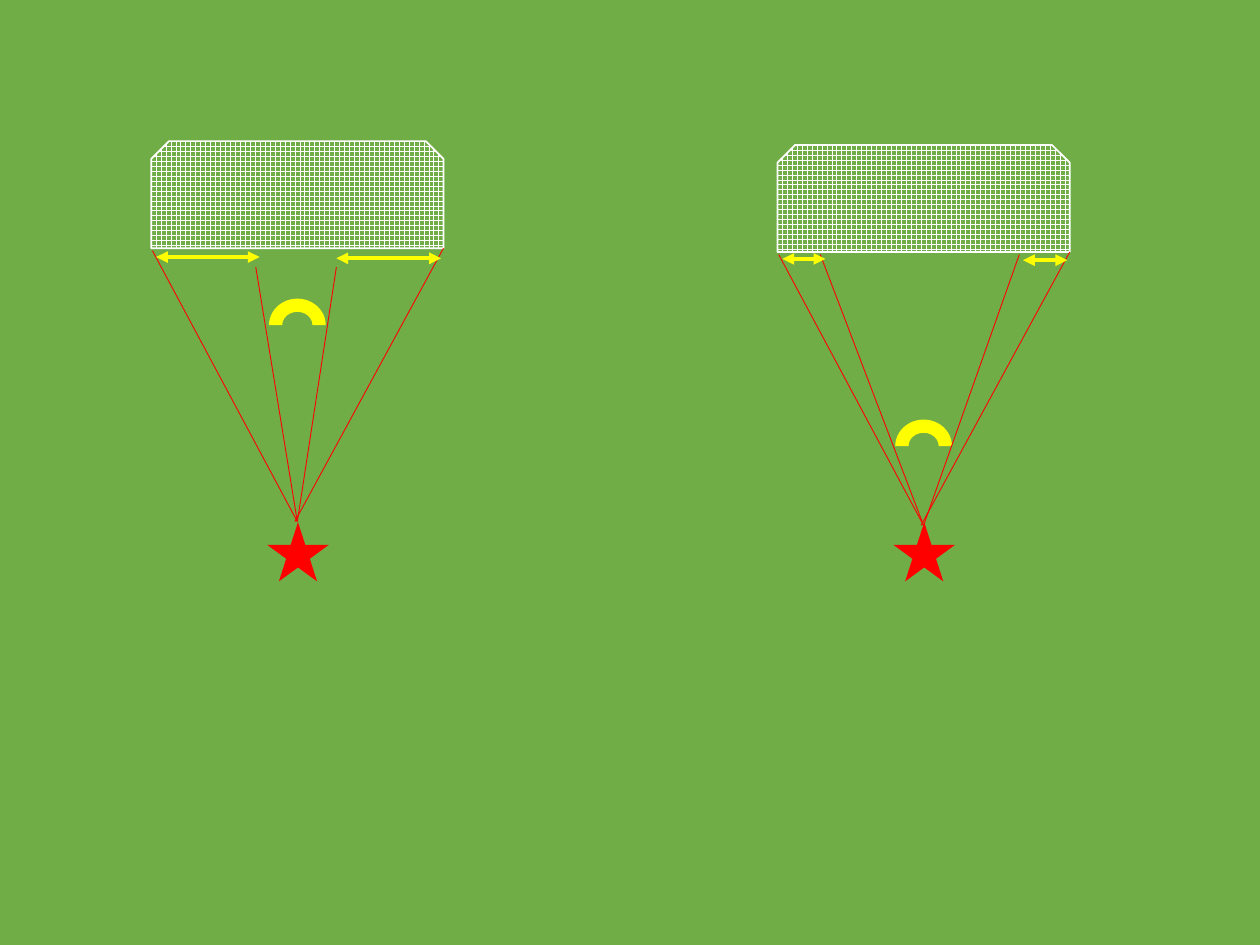
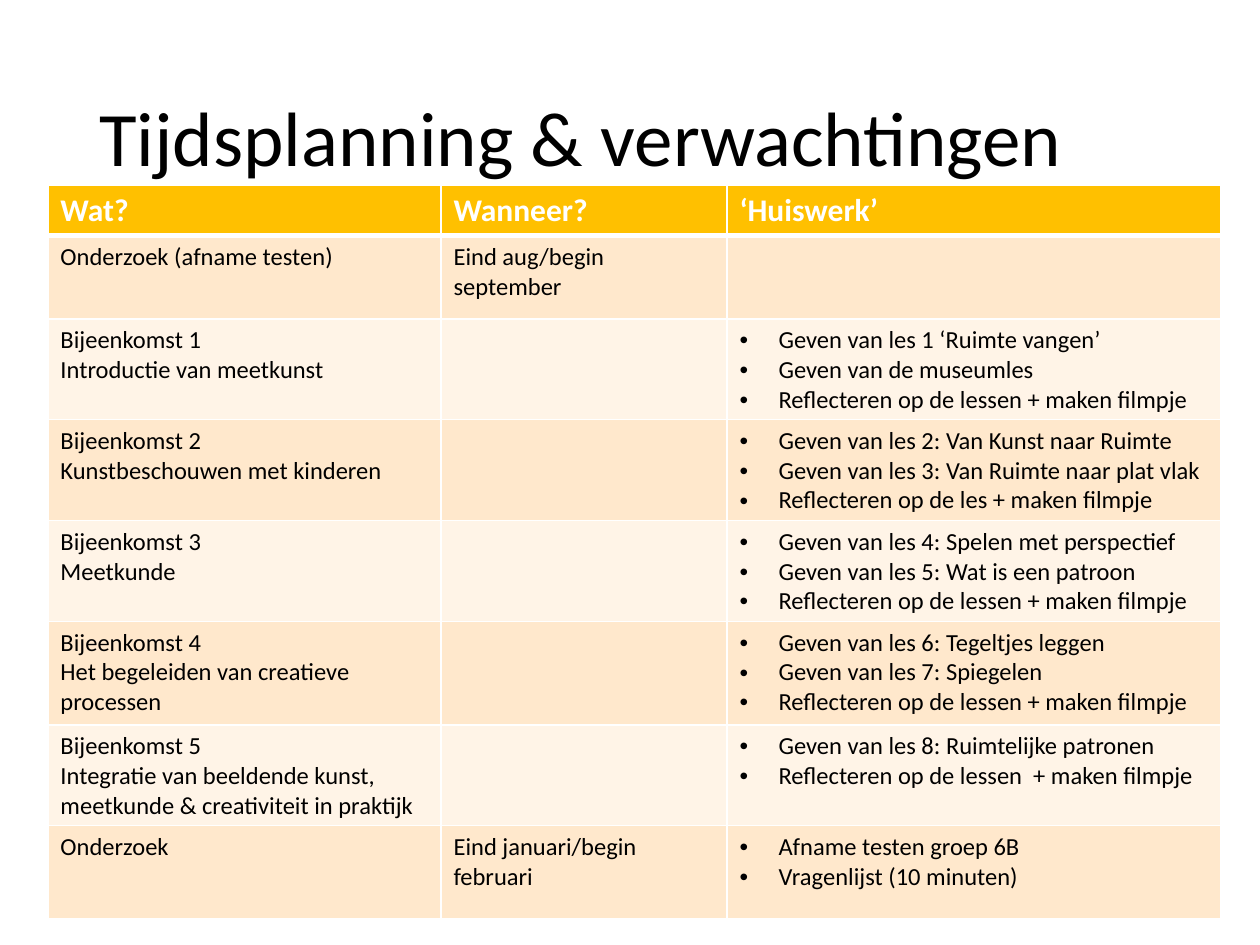
"""Build two slides: shooting angles at a goal, and a project schedule."""
from lxml.etree import SubElement
from pptx import Presentation
from pptx.dml.color import RGBColor
from pptx.enum.dml import MSO_PATTERN
from pptx.enum.shapes import MSO_CONNECTOR, MSO_SHAPE
from pptx.enum.text import MSO_ANCHOR
from pptx.oxml.ns import qn
from pptx.util import Inches, Pt

GRASS, WHITE, BLACK = "70AD47", "FFFFFF", "000000"
RED, YELLOW = "FF0000", "FFFF00"
HEADER, BANDS = "FFC000", ("FFF4E7", "FFE8CC")
GRID_COLUMNS, GRID_ROWS = 100, 75


def color(value):
    return RGBColor.from_string(value)


class Deck:
    """Hold the shared style and draw on the current slide, in grid units."""

    font = "Calibri"

    def __init__(self):
        self.presentation = Presentation()
        self.presentation.slide_width = Inches(10)
        self.presentation.slide_height = Inches(7.5)
        self.unit = self.presentation.slide_width / GRID_COLUMNS

    def add_slide(self):
        blank = self.presentation.slide_layouts[6]
        self.shapes = self.presentation.slides.add_slide(blank).shapes

    def grid(self, *lengths):
        return [round(length * self.unit) for length in lengths]

    def shape(self, preset, area, fill):
        shape = self.shapes.add_shape(preset, *self.grid(*area))
        shape.shadow.inherit = False
        shape.fill.solid()
        shape.fill.fore_color.rgb = color(fill)
        shape.line.fill.background()
        return shape

    def net(self, area):
        goal = self.shape(MSO_SHAPE.SNIP_2_SAME_RECTANGLE, area, GRASS)
        goal.fill.patterned()
        goal.fill.pattern = MSO_PATTERN.LARGE_GRID
        goal.fill.fore_color.rgb = color(WHITE)
        goal.fill.back_color.rgb = color(GRASS)
        goal.line.color.rgb = color(WHITE)
        goal.line.width = Pt(1)

    def line(self, start, end, stroke, width, arrows=False):
        connector = self.shapes.add_connector(
            MSO_CONNECTOR.STRAIGHT, *self.grid(*start, *end))
        connector.line.color.rgb = color(stroke)
        connector.line.width = Pt(width)
        properties = connector.element.spPr
        if arrows:
            outline = properties.find(qn("a:ln"))
            for tip in ("a:headEnd", "a:tailEnd"):
                SubElement(outline, qn(tip), type="triangle")
        SubElement(properties, qn("a:effectLst"))

    def style(self, paragraph, size, ink, bold=False):
        font = paragraph.font
        font.name, font.size, font.bold = self.font, Pt(size), bold
        font.color.rgb = color(ink)

    def title(self, wording, area):
        frame = self.shapes.add_textbox(*self.grid(*area)).text_frame
        frame.word_wrap = True
        frame.vertical_anchor = MSO_ANCHOR.MIDDLE
        frame.text = wording
        frame.paragraphs[0].line_spacing = 0.9
        self.style(frame.paragraphs[0], 44, BLACK)

    def bullet(self, paragraph):
        properties = paragraph._p.get_or_add_pPr()
        indent = Inches(0.31)
        properties.set("marL", str(indent))
        properties.set("indent", str(-indent))
        SubElement(properties, qn("a:buFont"), typeface="Arial")
        SubElement(properties, qn("a:buChar"), char="•")

    def borders(self, cell, **widths):
        properties = cell._tc.get_or_add_tcPr()
        for side in "LRTB":
            edge = SubElement(properties, qn(f"a:ln{side}"), w=str(Pt(widths.get(side, 1))))
            paint = SubElement(edge, qn("a:solidFill"))
            SubElement(paint, qn("a:srgbClr"), val=WHITE)

    def cell(self, cell, wording, row, bulleted):
        is_header = row == 0
        self.borders(cell, **({"B": 3} if is_header else {"T": 3} if row == 1 else {}))
        cell.fill.solid()
        cell.fill.fore_color.rgb = color(HEADER if is_header else BANDS[row % 2])
        cell.text = wording
        for paragraph in cell.text_frame.paragraphs:
            if bulleted and wording:
                self.bullet(paragraph)
            self.style(paragraph, 18 if is_header else 14,
                       WHITE if is_header else BLACK, is_header)

    def table(self, entries, corner, widths, heights):
        area = (*corner, sum(widths), sum(heights))
        table = self.shapes.add_table(
            len(heights), len(widths), *self.grid(*area)).table
        for column, width in zip(table.columns, self.grid(*widths)):
            column.width = width
        for row, height in zip(table.rows, self.grid(*heights)):
            row.height = height
        for row, wordings in enumerate(entries):
            for column, wording in enumerate(wordings):
                self.cell(table.cell(row, column), wording, row,
                          bulleted=row > 0 and column == 2)


SCHEDULE = [
    ("Wat?", "Wanneer?", "‘Huiswerk’"),
    ("Onderzoek (afname testen)", "Eind aug/begin september", ""),
    ("Bijeenkomst 1\nIntroductie van meetkunst", "",
     "Geven van les 1 ‘Ruimte vangen’\nGeven van de museumles\n"
     "Reflecteren op de lessen + maken filmpje"),
    ("Bijeenkomst 2\nKunstbeschouwen met kinderen", "",
     "Geven van les 2: Van Kunst naar Ruimte\n"
     "Geven van les 3: Van Ruimte naar plat vlak\n"
     "Reflecteren op de les + maken filmpje"),
    ("Bijeenkomst 3\nMeetkunde", "",
     "Geven van les 4: Spelen met perspectief\n"
     "Geven van les 5: Wat is een patroon\n"
     "Reflecteren op de lessen + maken filmpje"),
    ("Bijeenkomst 4\nHet begeleiden van creatieve processen", "",
     "Geven van les 6: Tegeltjes leggen\nGeven van les 7: Spiegelen\n"
     "Reflecteren op de lessen + maken filmpje"),
    ("Bijeenkomst 5\nIntegratie van beeldende kunst, "
     "meetkunde & creativiteit in praktijk", "",
     "Geven van les 8: Ruimtelijke patronen\n"
     "Reflecteren op de lessen  + maken filmpje"),
    ("Onderzoek", "Eind januari/begin februari",
     "Afname testen groep 6B\nVragenlijst (10 minuten)"),
]


def draw_goal(deck, left, top, arc_top, sights, sight_top, gaps, gap_top):
    width = 23.2
    player = (left + 11.6, top + 30.2)
    deck.net((left, top, width, 8.5))
    deck.shape(MSO_SHAPE.STAR_5_POINT, (left + 9.2, 41.45, 4.9, 4.7), RED)
    deck.shape(MSO_SHAPE.BLOCK_ARC, (left + 9.35, arc_top, 4.5, 4.2), YELLOW)
    for sight in sights:
        deck.line((left + sight, sight_top), player, RED, 0.5)
    deck.line((left + width, top + 8.5), (left + 11.4, top + 30.2), RED, 0.5)
    deck.line((left + 0.1, top + 8.7), player, RED, 0.5)
    left_gap, right_gap = gaps
    for start, end, drop in ((0.4, left_gap, 0), (right_gap, width - 0.2, 0.1)):
        deck.line((left + start, gap_top + drop), (left + end, gap_top + drop),
                  YELLOW, 2.25, arrows=True)


def main():
    deck = Deck()
    deck.add_slide()
    deck.shape(MSO_SHAPE.RECTANGLE, (0, 0, GRID_COLUMNS, GRID_ROWS), GRASS)
    draw_goal(deck, 12, 11.2, arc_top=23.7, sights=(8.3, 14.7), sight_top=21.2,
              gaps=(8.6, 14.7), gap_top=20.4)
    draw_goal(deck, 61.7, 11.5, arc_top=33.3, sights=(3.4, 19.2), sight_top=20.2,
              gaps=(3.8, 19.5), gap_top=20.55)

    deck.add_slide()
    deck.title("Tijdsplanning & verwachtingen", (6.9, 4, 86.2, 14.5))
    deck.table(SCHEDULE, (3.8, 14.7), widths=(31.2, 22.7, 39.2),
               heights=(3.9, 6.6, 7.1, 6.2, 7.8, 8.2, 7.6, 7.4))
    deck.presentation.save("out.pptx")


if __name__ == "__main__":
    main()
